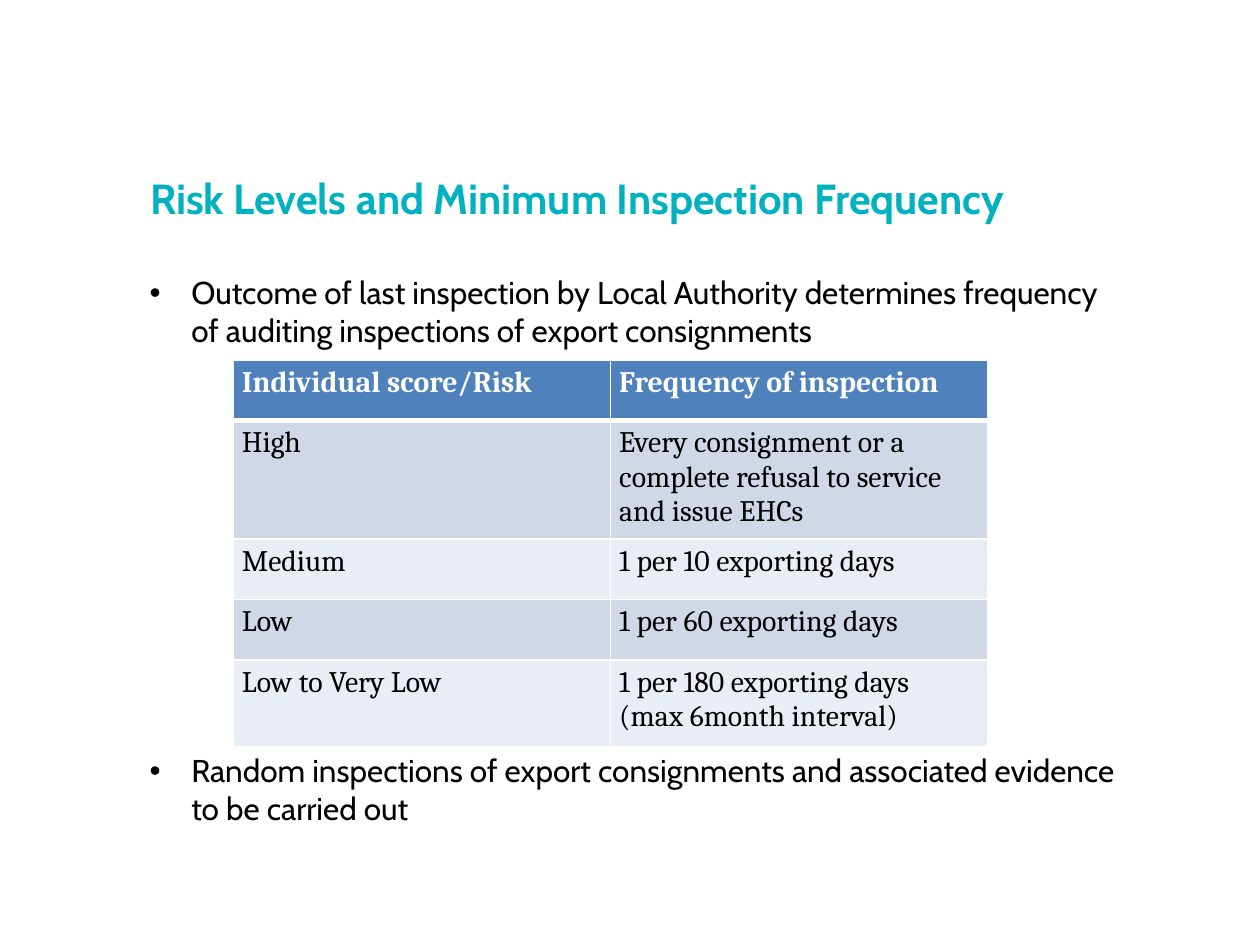
"""Build the slide on risk levels and minimum inspection frequency."""
from lxml import etree
from pptx import Presentation
from pptx.dml.color import RGBColor
from pptx.enum.text import MSO_ANCHOR, PP_ALIGN
from pptx.oxml.ns import qn
from pptx.util import Inches, Pt

CENTER, LEFT, TOP = PP_ALIGN.CENTER, PP_ALIGN.LEFT, MSO_ANCHOR.TOP
HEADER_FILL, BAND_FILLS = "4F81BD", ("E9EDF4", "D0D8E8")
WHITE, BLACK, TEAL = "FFFFFF", "000000", "00B1BF"

presentation = Presentation()
presentation.slide_width, presentation.slide_height = Inches(10), Inches(7.5)
slide = presentation.slides.add_slide(presentation.slide_layouts[6])
column = presentation.slide_width / 100
row = presentation.slide_height / 75


def style_paragraph(paragraph, font_name, size, color, bold=False, alignment=LEFT):
    paragraph.alignment = alignment
    for run in paragraph.runs:
        run.font.name, run.font.size, run.font.bold = font_name, Pt(size), bold
        run.font.color.rgb = RGBColor.from_string(color)


def add_text_box(left, top, width, height, text):
    box = slide.shapes.add_textbox(
        int(left * column), int(top * row), int(width * column), int(height * row))
    text_frame = box.text_frame
    text_frame.word_wrap, text_frame.vertical_anchor = True, TOP
    text_frame.text = text
    return text_frame


title = add_text_box(4, 13.2, 83.6, 6.7, "Risk Levels and Minimum Inspection Frequency")
style_paragraph(title.paragraphs[0], "Cabin", 24, TEAL, True, CENTER)

body = add_text_box(
    10.9, 21.2, 79, 49.8,
    "Outcome of last inspection by Local Authority determines frequency "
    "of auditing inspections of export consignments\n"
    "Random inspections of export consignments and associated evidence "
    "to be carried out")
for paragraph in body.paragraphs:
    properties = paragraph._p.get_or_add_pPr()
    properties.set("marL", str(int(3.3 * column)))
    properties.set("indent", str(int(-3.3 * column)))
    etree.SubElement(properties, qn("a:buFont"), typeface="Arial")
    etree.SubElement(properties, qn("a:buChar"), char="•")
    style_paragraph(paragraph, "Cabin", 18, BLACK)
body.paragraphs[1].space_before = Pt(230)

risk_rows = [
    ("Individual score/Risk", "Frequency of inspection"),
    ("High", "Every consignment or a complete refusal to service and issue EHCs"),
    ("Medium", "1 per 10 exporting days"),
    ("Low", "1 per 60 exporting days"),
    ("Low to Very Low", "1 per 180 exporting days\n(max 6month interval)"),
]
row_heights = [4.8, 9.4, 4.8, 4.8, 6.9]
table = slide.shapes.add_table(
    len(risk_rows), 2, int(18.5 * column), int(28.6 * row),
    int(59.9 * column), int(sum(row_heights) * row)).table

for row_index, (texts, height) in enumerate(zip(risk_rows, row_heights)):
    table.rows[row_index].height = int(height * row)
    is_header = row_index == 0
    for column_index, text in enumerate(texts):
        cell = table.cell(row_index, column_index)
        cell.text = text
        cell.margin_left = cell.margin_right = int(0.7 * column)
        cell.margin_top = cell.margin_bottom = int(0.4 * row)
        for paragraph in cell.text_frame.paragraphs:
            style_paragraph(paragraph, "Cambria", 17, WHITE if is_header else BLACK, is_header)
        cell_properties = cell._tc.get_or_add_tcPr()
        for side in "LRTB":
            thick = (row_index, side) in ((0, "B"), (1, "T"))
            line = etree.SubElement(
                cell_properties, qn("a:ln" + side), w=str(Pt(3 if thick else 1)))
            line_fill = etree.SubElement(line, qn("a:solidFill"))
            etree.SubElement(line_fill, qn("a:srgbClr"), val=WHITE)
        cell.fill.solid()
        cell.fill.fore_color.rgb = RGBColor.from_string(
            HEADER_FILL if is_header else BAND_FILLS[row_index % 2])

presentation.save("out.pptx")
